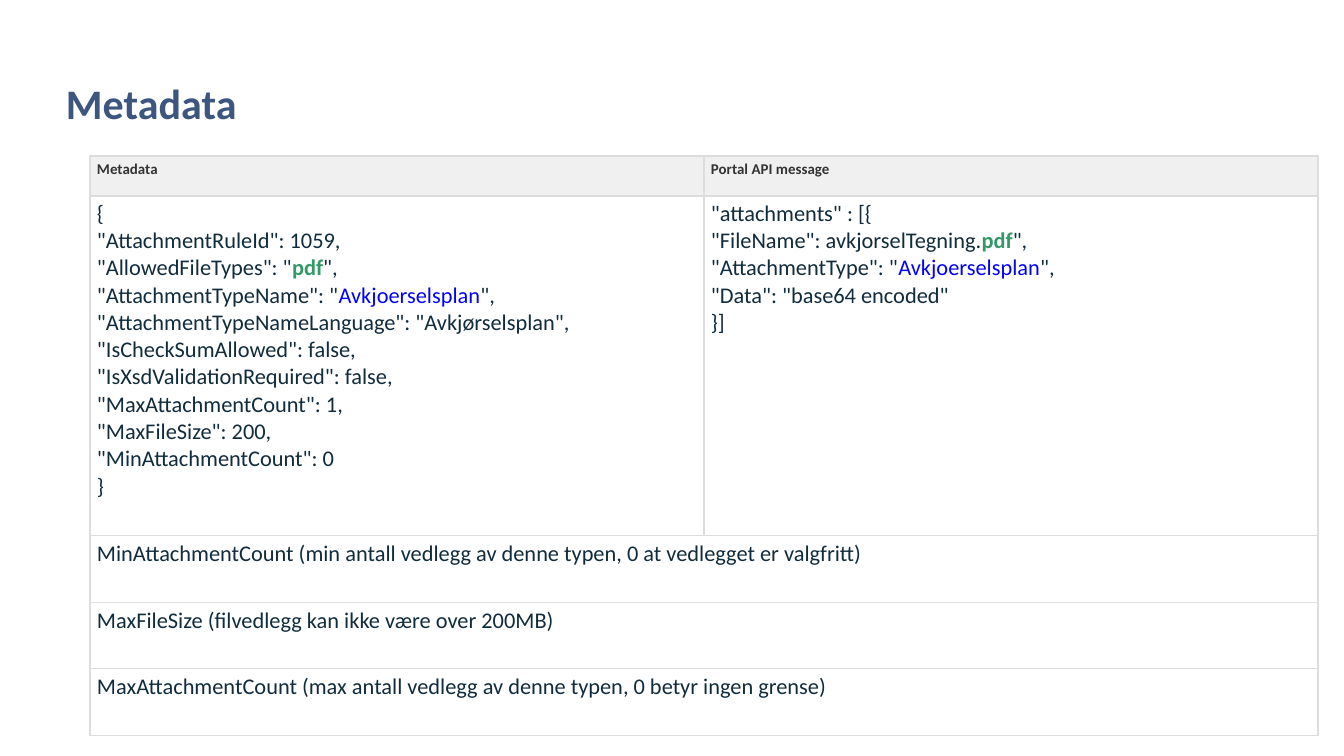
from lxml import etree
from pptx import Presentation
from pptx.dml.color import RGBColor
from pptx.enum.text import MSO_ANCHOR, MSO_AUTO_SIZE, PP_ALIGN
from pptx.oxml.ns import qn
from pptx.util import Pt

EMU_PER_PX = 914400 / 134.4
LEFT = PP_ALIGN.LEFT
TOP, BOTTOM = MSO_ANCHOR.TOP, MSO_ANCHOR.BOTTOM
NO_AUTOFIT = MSO_AUTO_SIZE.NONE

FONT = "Calibri"
TITLE_BLUE, HEADER_TEXT, INK = "3D5680", "333333", "112C3C"
GREEN, BLUE = "339966", "0000FF"
HEADER_FILL, WHITE, BORDER = "F0F0F0", "FFFFFF", "DDDDDD"

COLUMN_WIDTH = 614
ROW_HEIGHTS = [40, 340, 67, 66, 67]

# Highlighted values shared by both code cells: text, colour, bold
FILE_TYPE = ("pdf", GREEN, True)
TYPE_NAME = ("Avkjoerselsplan", BLUE, False)

HEADERS = ["Metadata", "Portal API message"]
METADATA_CODE = [
    '{\n"AttachmentRuleId": 1059,\n"AllowedFileTypes": "',
    FILE_TYPE,
    '",\n"AttachmentTypeName": "',
    TYPE_NAME,
    '",\n"AttachmentTypeNameLanguage": "Avkjørselsplan",\n'
    '"IsCheckSumAllowed": false,\n"IsXsdValidationRequired": false,\n'
    '"MaxAttachmentCount": 1,\n"MaxFileSize": 200,\n"MinAttachmentCount": 0\n}',
]
MESSAGE_CODE = [
    '"attachments" : [{\n"FileName": avkjorselTegning.',
    FILE_TYPE,
    '",\n"AttachmentType": "',
    TYPE_NAME,
    '",\n"Data": "base64 encoded"\n}]',
]
RULES = [
    "MinAttachmentCount (min antall vedlegg av denne typen, 0 at vedlegget er valgfritt)",
    "MaxFileSize (filvedlegg kan ikke være over 200MB)",
    "MaxAttachmentCount (max antall vedlegg av denne typen, 0 betyr ingen grense)",
]


def px(value):
    return round(value * EMU_PER_PX)


def color(hex_value):
    return RGBColor.from_string(hex_value)


def write_text(paragraph, parts, size=12, ink=INK, bold=False, line_spacing=None):
    """Write plain strings and (text, colour, bold) parts, with line breaks."""
    paragraph.alignment = LEFT
    if line_spacing:
        paragraph.line_spacing = Pt(line_spacing)
    for part in parts:
        text, part_ink, part_bold = (part, ink, bold) if isinstance(part, str) else part
        for index, line in enumerate(text.split("\n")):
            if index:
                paragraph.add_line_break()
            if line:
                run = paragraph.add_run()
                run.text = line
                run.font.name = FONT
                run.font.size = Pt(size)
                run.font.bold = part_bold
                run.font.color.rgb = color(part_ink)


def add_title(slide, text):
    title = slide.shapes.title
    title.left, title.top, title.width, title.height = px(66), 0, px(1060), px(128)
    frame = title.text_frame
    frame.margin_left = frame.margin_top = frame.margin_right = frame.margin_bottom = 0
    frame.word_wrap = True
    frame.auto_size = NO_AUTOFIT
    frame.vertical_anchor = BOTTOM
    write_text(frame.paragraphs[0], [text], size=22.5, ink=TITLE_BLUE, bold=True,
               line_spacing=25.5)


def set_borders(cell):
    properties = cell._tc.get_or_add_tcPr()
    for side in ("lnL", "lnR", "lnT", "lnB"):
        line = etree.SubElement(properties, qn(f"a:{side}"), w=str(Pt(0.75)))
        fill = etree.SubElement(line, qn("a:solidFill"))
        etree.SubElement(fill, qn("a:srgbClr"), val=BORDER)


def style_cell(cell, fill):
    cell.margin_left = cell.margin_right = px(7)
    cell.margin_top = cell.margin_bottom = px(4)
    cell.vertical_anchor = TOP
    set_borders(cell)
    cell.fill.solid()
    cell.fill.fore_color.rgb = color(fill)


def fill_cell(cell, parts, **text_format):
    write_text(cell.text_frame.paragraphs[0], parts, **text_format)


def add_metadata_table(slide):
    frame = slide.shapes.add_table(len(ROW_HEIGHTS), 2, px(90), px(156),
                                   px(2 * COLUMN_WIDTH), px(sum(ROW_HEIGHTS)))
    table = frame.table
    table.first_row = table.horz_banding = False
    for column in table.columns:
        column.width = px(COLUMN_WIDTH)
    for row_index, height in enumerate(ROW_HEIGHTS):
        table.rows[row_index].height = px(height)
        for column_index in range(2):
            style_cell(table.cell(row_index, column_index),
                       WHITE if row_index else HEADER_FILL)

    # Header and code rows
    for column_index, (header, code) in enumerate(
            zip(HEADERS, [METADATA_CODE, MESSAGE_CODE])):
        fill_cell(table.cell(0, column_index), [header], size=8, ink=HEADER_TEXT, bold=True)
        fill_cell(table.cell(1, column_index), code)

    # Full-width rule rows
    for row_index, rule in enumerate(RULES, start=2):
        table.cell(row_index, 0).merge(table.cell(row_index, 1))
        fill_cell(table.cell(row_index, 0), [rule])


def main():
    presentation = Presentation()
    presentation.slide_width, presentation.slide_height = px(1344), px(756)
    slide = presentation.slides.add_slide(presentation.slide_layouts[5])
    add_title(slide, "Metadata")
    add_metadata_table(slide)
    presentation.save("out.pptx")


if __name__ == "__main__":
    main()
